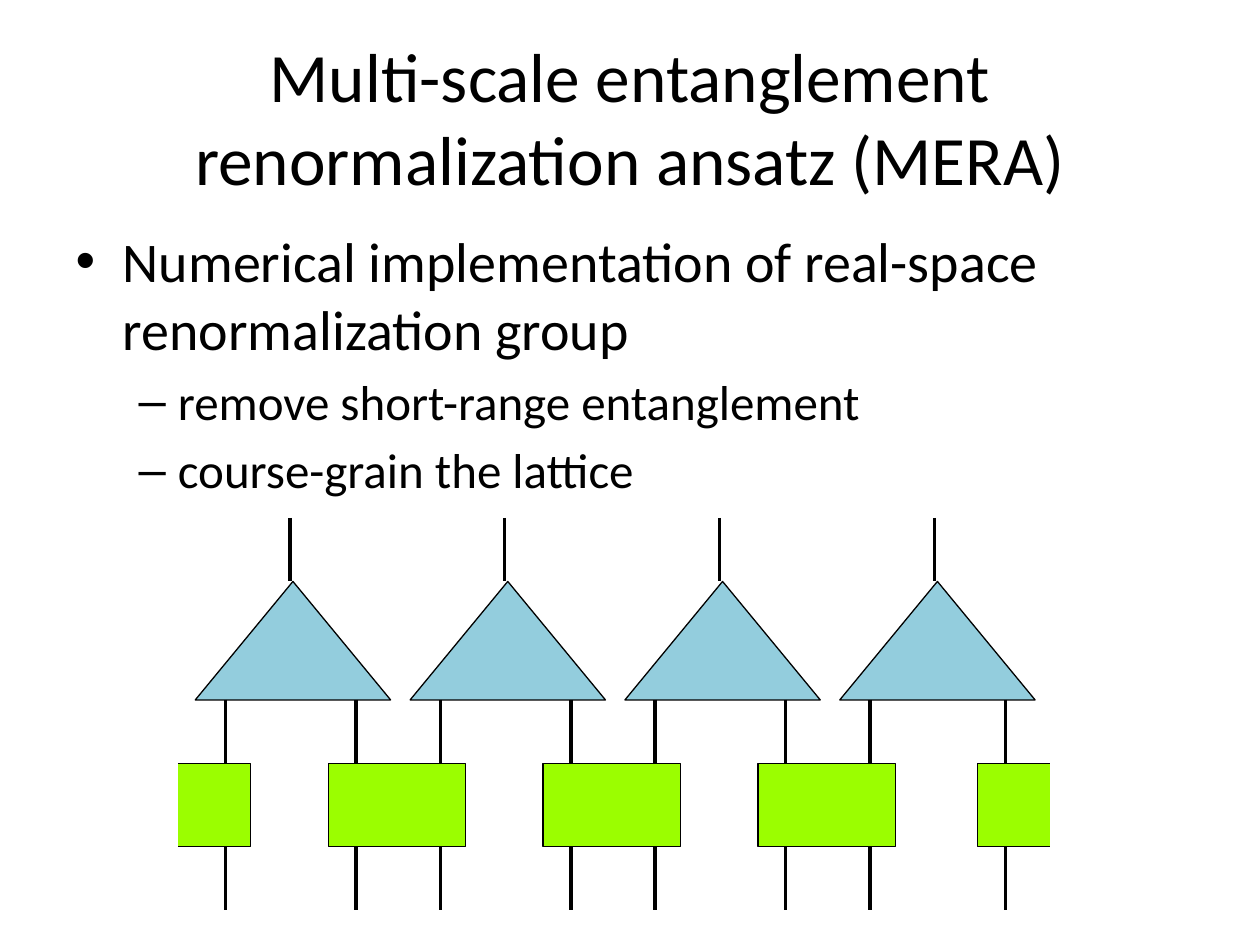
from lxml import etree
from pptx import Presentation
from pptx import util as u
from pptx.dml.color import RGBColor
from pptx.enum import shapes, text
from pptx.oxml.ns import qn

BLACK = RGBColor(0x00, 0x00, 0x00)
WHITE = RGBColor(0xFF, 0xFF, 0xFF)
GREEN = RGBColor(0x9B, 0xFE, 0x00)
BLUE = RGBColor(0x93, 0xCD, 0xDD)
FONT = "Calibri"
RECT = shapes.MSO_SHAPE.RECTANGLE
PEAK = shapes.MSO_SHAPE.ISOSCELES_TRIANGLE


def place(item, box):
    item.left, item.top, item.width, item.height = map(u.Inches, box)


def add_run(par, words, size):
    run = par.add_run()
    run.text = words
    run.font.name = FONT
    run.font.size = u.Pt(size)
    run.font.color.rgb = BLACK


def add_block(slide, kind, box, fill, edge=BLACK, width=0.75):
    block = slide.shapes.add_shape(kind, *map(u.Inches, box))
    block.shadow.inherit = False
    block.fill.solid()
    block.fill.fore_color.rgb = fill
    block.line.color.rgb = edge
    block.line.width = u.Pt(width)


def add_leg(slide, x, top, end):
    leg = slide.shapes.add_connector(
        shapes.MSO_CONNECTOR.STRAIGHT, *map(u.Inches, (x, top, x, end)))
    leg.line.color.rgb = BLACK
    leg.line.width = u.Pt(2)
    etree.SubElement(leg._element.spPr, qn("a:effectLst"))


def add_title(slide, box):
    title = slide.shapes.title
    place(title, box)
    frame = title.text_frame
    frame.auto_size = text.MSO_AUTO_SIZE.NONE
    frame.vertical_anchor = text.MSO_ANCHOR.MIDDLE
    par = frame.paragraphs[0]
    par.alignment = text.PP_ALIGN.CENTER
    add_run(par, "Multi-scale entanglement renormalization ansatz (MERA)", 39.6)


def add_list(slide, box):
    body = slide.placeholders[1]
    place(body, box)
    frame = body.text_frame
    frame.auto_size = text.MSO_AUTO_SIZE.NONE
    items = [
        (0, "Numerical implementation of real-space renormalization group", 32),
        (1, "remove short-range entanglement", 28),
        (1, "course-grain the lattice", 28),
    ]
    for i, (level, words, size) in enumerate(items):
        par = frame.add_paragraph() if i else frame.paragraphs[0]
        par.level = level
        add_run(par, words, size)


def add_net(slide, box):
    left, top, width, height = box
    count, pitch = 5, 1.705
    leg, peak, gate = 0.505, 0.94, 0.66
    base = top + leg + peak      # bottom of the triangles
    deck = base + leg            # top of the rectangles
    floor = deck + gate          # bottom of the rectangles
    last = count - 1

    for i in range(count):
        # The last rectangle sits slightly further right
        x = left + i * pitch + (0.04 if i == last else 0)
        add_block(slide, RECT, (x, deck, 1.09, gate), GREEN)

        # Triangle with its upper leg
        if i < last:
            add_block(slide, PEAK, (x + 0.65, top + leg, 1.55, peak), BLUE)
            add_leg(slide, x + 1.4, top, top + leg)

        # Legs above and below; the outer half of each end has none
        sides = ([0.22] if i > 0 else []) + ([0.89] if i < last else [])
        for side in sides:
            add_leg(slide, x + side, base, deck)
            add_leg(slide, x + side, floor, floor + leg)

    # White panels crop the end rectangles
    crop = 1.26
    for x in (left - 0.76, left + width - 0.5):
        add_block(slide, RECT, (x, top, crop, height), WHITE, WHITE, 2)


def main():
    deck = Presentation()
    deck.slide_width, deck.slide_height = u.Inches(10), u.Inches(7.5)
    slide = deck.slides.add_slide(deck.slide_layouts[1])
    add_title(slide, (0.5, 0.3, 9, 1.25))
    add_list(slide, (0.5, 1.75, 9, 4.95))
    add_net(slide, (0.9, 4.11, 7.95, 3.11))
    deck.save("out.pptx")


if __name__ == "__main__":
    main()
